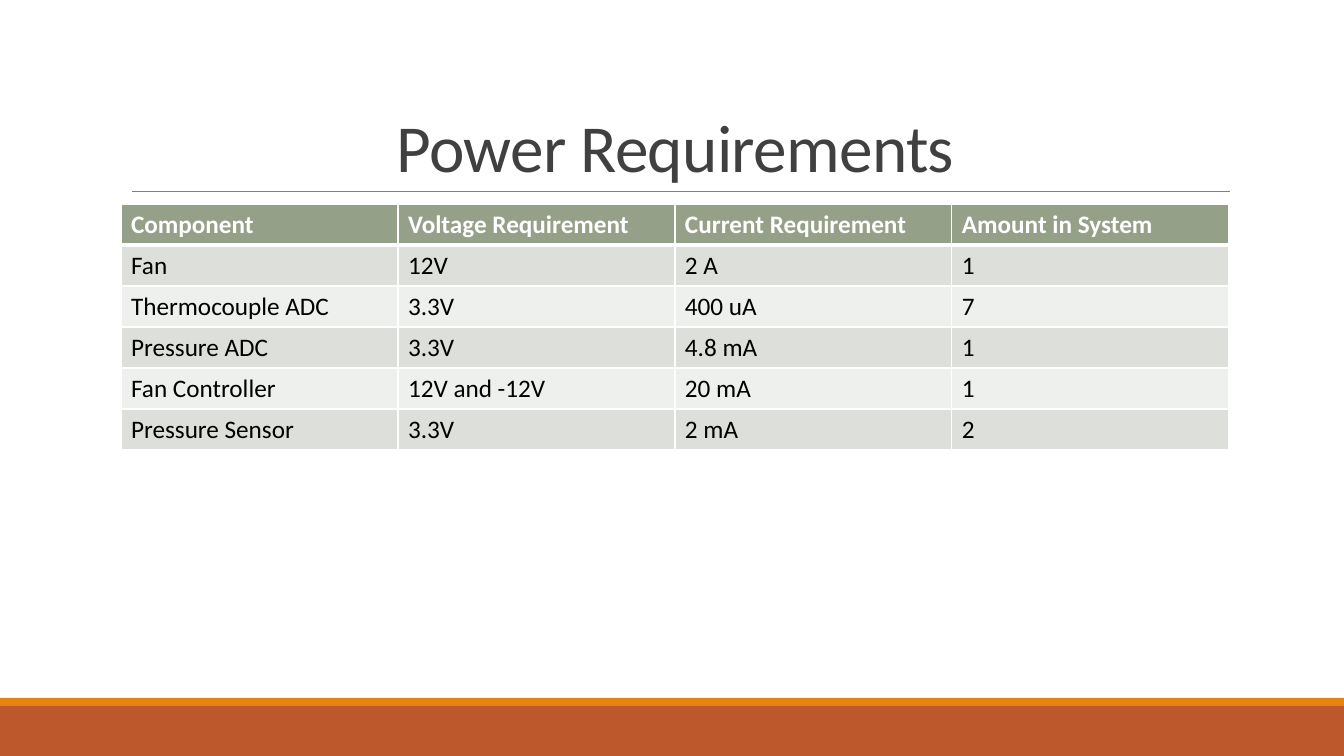
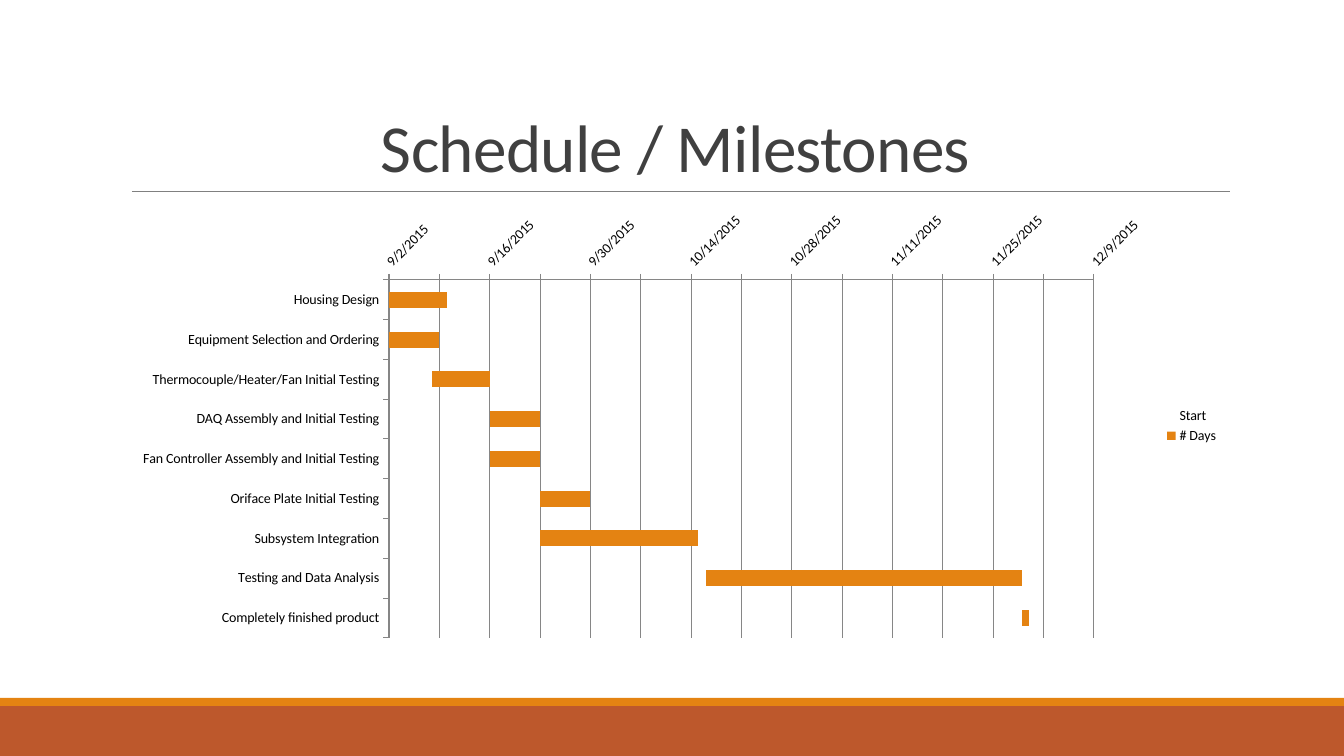
from typing import NamedTuple

from lxml.etree import SubElement
from pptx import Presentation
from pptx.chart.data import CategoryChartData
from pptx.dml.color import RGBColor
from pptx.enum.chart import XL_CHART_TYPE as ChartType
from pptx.enum.chart import XL_LEGEND_POSITION as LegendPosition
from pptx.enum.chart import XL_TICK_MARK as TickMark
from pptx.enum.shapes import MSO_CONNECTOR as Connector
from pptx.enum.shapes import MSO_SHAPE as Shape
from pptx.enum.text import MSO_ANCHOR as Anchor
from pptx.enum.text import PP_ALIGN as Align
from pptx.oxml import parse_xml
from pptx.oxml.ns import nsdecls, qn
from pptx.util import Emu, Pt

SLIDE_WIDTH, SLIDE_HEIGHT = 1344, 756
EMU_PER_PX = 12192000 / SLIDE_WIDTH
FONT = "Calibri"
COLORS = {
    "rust": "BD582C",
    "orange": "E48312",
    "rule": "808080",
    "grid": "868686",
    "title": "404040",
    "text": "000000",
    "white": "FFFFFF",
    "header": "94A088",
    "odd_row": "DCDFDA",
    "even_row": "EEF0ED",
}


class Box(NamedTuple):
    left: int
    top: int
    width: int
    height: int


class Band(NamedTuple):
    box: Box
    color: str


class Task(NamedTuple):
    name: str
    start: int  # days after FIRST_DAY
    days: int


BANDS = (
    Band(Box(0, 706, SLIDE_WIDTH, 50), "rust"),
    Band(Box(0, 698, SLIDE_WIDTH, 8), "orange"),
)
TITLE_BOX = Box(121, 31, 1109, 160)
RULE_LEFT, RULE_RIGHT, RULE_TOP = 132, 1230, 191
CONTENT_BOX = Box(121, 204, 1108, 444)
PLOT_BOX = Box(389, 280, 705, 358)
ROW_HEIGHT = 41

POWER_ROWS = (
    ("Component", "Voltage Requirement", "Current Requirement", "Amount in System"),
    ("Fan", "12V", "2 A", "1"),
    ("Thermocouple ADC", "3.3V", "400 uA", "7"),
    ("Pressure ADC", "3.3V", "4.8 mA", "1"),
    ("Fan Controller", "12V and -12V", "20 mA", "1"),
    ("Pressure Sensor", "3.3V", "2 mA", "2"),
)

FIRST_DAY = 42249  # serial number of 9/2/2015
WEEK = 7
WEEKS_SHOWN = 14
TASKS = (
    Task("Housing Design", 0, 8),
    Task("Equipment Selection and Ordering", 0, 7),
    Task("Thermocouple/Heater/Fan Initial Testing", 6, 8),
    Task("DAQ Assembly and Initial Testing", 14, 7),
    Task("Fan Controller Assembly and Initial Testing", 14, 7),
    Task("Oriface Plate Initial Testing", 21, 7),
    Task("Subsystem Integration", 21, 22),
    Task("Testing and Data Analysis", 44, 44),
    Task("Completely finished product", 88, 1),
)


def px(length: float) -> Emu:
    return Emu(round(length * EMU_PER_PX))


def place(box: Box) -> tuple:
    return tuple(px(length) for length in box)


def color(name: str) -> RGBColor:
    return RGBColor.from_string(COLORS[name])


def style_font(font, size: float, color_name: str, bold: bool = False) -> None:
    font.name = FONT
    font.size = Pt(size)
    font.bold = bold
    font.color.rgb = color(color_name)


def style_line(line, color_name: str, width: float) -> None:
    line.color.rgb = color(color_name)
    line.width = Pt(width)


def add_band(slide, band: Band) -> None:
    shape = slide.shapes.add_shape(Shape.RECTANGLE, *place(band.box))
    shape.shadow.inherit = False
    shape.fill.solid()
    shape.fill.fore_color.rgb = color(band.color)
    shape.line.fill.background()


def add_title_rule(slide) -> None:
    rule = slide.shapes.add_connector(
        Connector.STRAIGHT, px(RULE_LEFT), px(RULE_TOP), px(RULE_RIGHT), px(RULE_TOP)
    )
    style_line(rule.line, "rule", 0.5)
    SubElement(rule.element.spPr, qn("a:effectLst"))


def add_title(slide, title: str) -> None:
    frame = slide.shapes.add_textbox(*place(TITLE_BOX)).text_frame
    frame.word_wrap = True
    frame.vertical_anchor = Anchor.BOTTOM
    paragraph = frame.paragraphs[0]
    paragraph.alignment = Align.CENTER
    paragraph.line_spacing = 0.85
    run = paragraph.add_run()
    run.text = title
    style_font(run.font, 48, "title")
    run.font._element.set("spc", "-50")


def add_slide(presentation, title: str):
    """Add a blank slide with the shared bands, rule and title."""
    slide = presentation.slides.add_slide(presentation.slide_layouts[6])
    for band in BANDS:
        add_band(slide, band)
    add_title_rule(slide)
    add_title(slide, title)
    return slide


def set_borders(cell, top: float, bottom: float) -> None:
    """Give a cell white borders, with the side ones 1 point wide."""
    properties = cell._tc.get_or_add_tcPr()
    for side, width in (("L", 1), ("R", 1), ("T", top), ("B", bottom)):
        line = SubElement(properties, qn(f"a:ln{side}"), w=str(Pt(width)))
        fill = SubElement(line, qn("a:solidFill"))
        SubElement(fill, qn("a:srgbClr"), val=COLORS["white"])


def add_power_table(slide) -> None:
    row_count, column_count = len(POWER_ROWS), len(POWER_ROWS[0])
    box = CONTENT_BOX._replace(height=ROW_HEIGHT * row_count)
    table = slide.shapes.add_table(row_count, column_count, *place(box)).table
    for row_index, row in enumerate(POWER_ROWS):
        is_header = row_index == 0
        fill_name = "header" if is_header else "odd_row" if row_index % 2 else "even_row"
        for column_index, text in enumerate(row):
            cell = table.cell(row_index, column_index)
            set_borders(cell, top=3 if row_index == 1 else 1, bottom=3 if is_header else 1)
            cell.fill.solid()
            cell.fill.fore_color.rgb = color(fill_name)
            run = cell.text_frame.paragraphs[0].add_run()
            run.text = text
            style_font(run.font, 18, "white" if is_header else "text", is_header)


def set_plot_layout(chart) -> None:
    """Fix the inner plot area, as fractions of the chart."""
    fractions = {
        "x": (PLOT_BOX.left - CONTENT_BOX.left) / CONTENT_BOX.width,
        "y": (PLOT_BOX.top - CONTENT_BOX.top) / CONTENT_BOX.height,
        "w": PLOT_BOX.width / CONTENT_BOX.width,
        "h": PLOT_BOX.height / CONTENT_BOX.height,
    }
    plot_area = chart.element.xpath(".//c:plotArea")[0]
    for old_layout in plot_area.findall(qn("c:layout")):
        plot_area.remove(old_layout)
    layout = parse_xml(
        f'<c:layout {nsdecls("c")}><c:manualLayout><c:layoutTarget val="inner"/>'
        '<c:xMode val="edge"/><c:yMode val="edge"/>'
        + "".join(f'<c:{key} val="{value:.4f}"/>' for key, value in fractions.items())
        + "</c:manualLayout></c:layout>"
    )
    plot_area.insert(0, layout)


def style_axes(chart) -> None:
    for axis in (chart.category_axis, chart.value_axis):
        axis.major_tick_mark = TickMark.OUTSIDE
        axis.minor_tick_mark = TickMark.NONE
        style_line(axis.format.line, "grid", 0.75)
        style_font(axis.tick_labels.font, 10, "text")
    chart.category_axis.reverse_order = True

    dates = chart.value_axis
    dates.minimum_scale = FIRST_DAY
    dates.maximum_scale = FIRST_DAY + WEEKS_SHOWN * WEEK
    dates.major_unit = WEEK
    dates.has_major_gridlines = True
    style_line(dates.major_gridlines.format.line, "grid", 0.75)
    dates.tick_labels.number_format = "m/d/yyyy"
    dates.tick_labels.number_format_is_linked = False
    label_body = chart.element.xpath(".//c:valAx/c:txPr/a:bodyPr")[0]
    label_body.set("rot", str(-45 * 60000))


def add_schedule_chart(slide) -> None:
    data = CategoryChartData()
    data.categories = [task.name for task in TASKS]
    data.add_series("Start", [FIRST_DAY + task.start for task in TASKS])
    data.add_series("# Days", [task.days for task in TASKS])
    chart = slide.shapes.add_chart(
        ChartType.BAR_STACKED, *place(CONTENT_BOX), data
    ).chart
    style_font(chart.font, 10, "text")
    chart.has_title = False
    chart.has_legend = True
    chart.legend.position = LegendPosition.RIGHT
    chart.legend.include_in_layout = False

    plot = chart.plots[0]
    plot.vary_by_categories = False
    plot.gap_width = 150
    plot.overlap = 100
    start, days = plot.series
    start.format.fill.background()
    start.format.line.fill.background()
    days.format.fill.solid()
    days.format.fill.fore_color.rgb = color("orange")
    style_axes(chart)
    set_plot_layout(chart)


def main() -> None:
    presentation = Presentation()
    presentation.slide_width = px(SLIDE_WIDTH)
    presentation.slide_height = px(SLIDE_HEIGHT)
    add_power_table(add_slide(presentation, "Power Requirements"))
    add_schedule_chart(add_slide(presentation, "Schedule / Milestones"))
    presentation.save("out.pptx")


if __name__ == "__main__":
    main()
